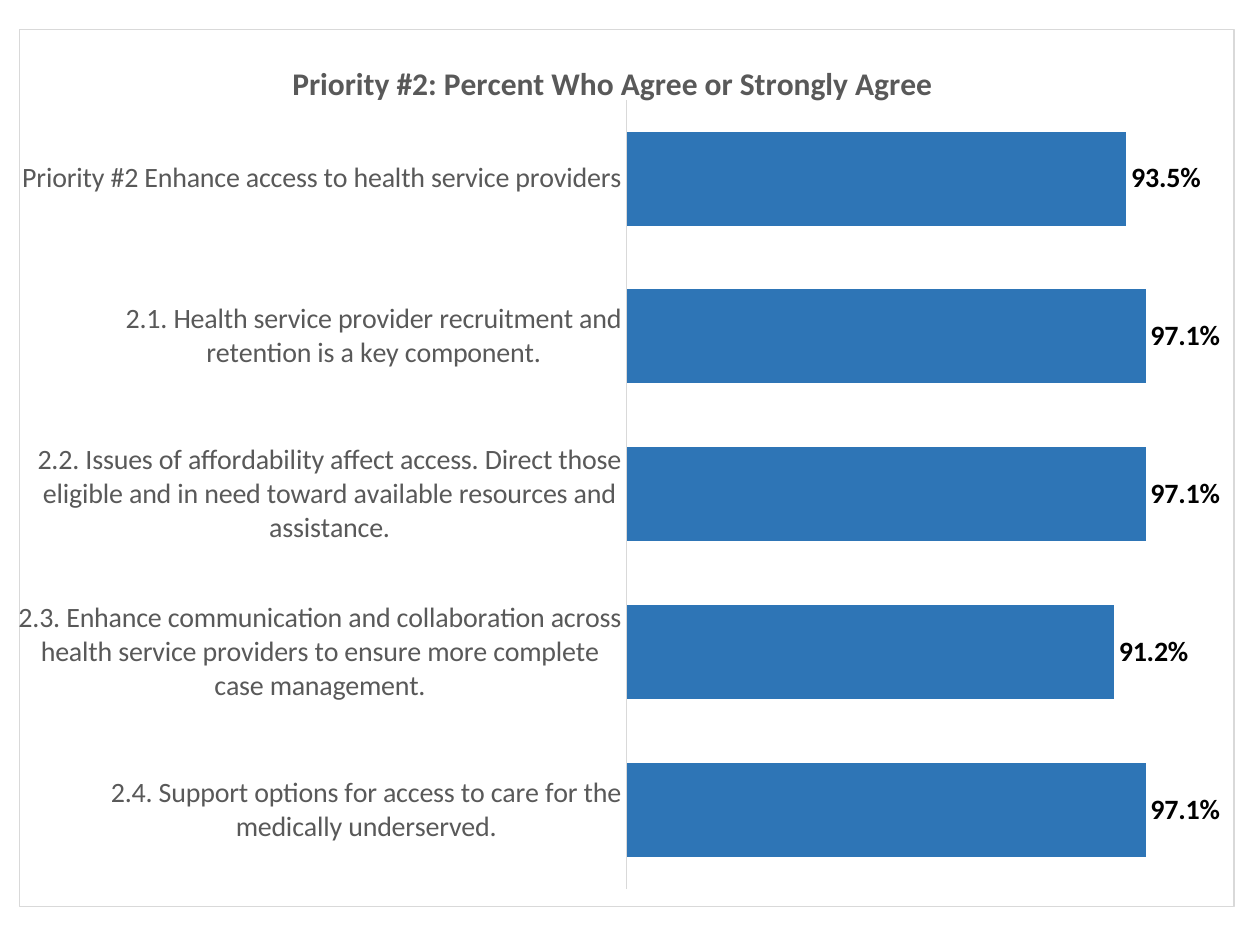
"""Build a one-slide deck with a bar chart of agreement on Priority #2."""
from lxml import etree
from pptx import Presentation
from pptx import util as u
from pptx.chart import data as chart_data
from pptx.dml.color import RGBColor
from pptx.enum import chart as ch
from pptx.oxml import ns

BLACK = RGBColor(0x00, 0x00, 0x00)
GREY = RGBColor(0x59, 0x59, 0x59)
LIGHT_GREY = RGBColor(0xD9, 0xD9, 0xD9)
BLUE = RGBColor(0x2E, 0x75, 0xB6)

TITLE = "Priority #2: Percent Who Agree or Strongly Agree"
AGREEMENT = {
    "Priority #2 Enhance access to health service providers": 0.935,
    "2.1. Health service provider recruitment and retention is a key component.": 0.971,
    "2.2. Issues of affordability affect access. Direct those eligible and in need "
    "toward available resources and assistance.": 0.971,
    "2.3. Enhance communication and collaboration across health service providers "
    "to ensure more complete case management.": 0.912,
    "2.4. Support options for access to care for the medically underserved.": 0.971,
}


class Slide:
    font_name = "Calibri"
    percent = "0.0%"

    def __init__(self, deck):
        self.page = deck.slides.add_slide(deck.slide_layouts[6])

    def set_font(self, font, size, color, bold=False):
        font.name, font.size, font.bold = self.font_name, u.Pt(size), bold
        font.color.rgb = color

    def place(self, parent, index, **settings):
        for old in parent.findall(ns.qn("c:layout")):
            parent.remove(old)
        layout = etree.Element(ns.qn("c:layout"))
        manual = etree.SubElement(layout, ns.qn("c:manualLayout"))
        for name, value in settings.items():
            etree.SubElement(manual, ns.qn(f"c:{name}"), val=str(value))
        parent.insert(index, layout)

    def add_border(self, chart, color, width):
        area = ns.qn("c:chart")
        props = etree.Element(ns.qn("c:spPr"))
        etree.SubElement(props, ns.qn("a:noFill"))
        line = etree.SubElement(props, ns.qn("a:ln"), w=str(u.Pt(width)))
        fill = etree.SubElement(line, ns.qn("a:solidFill"))
        etree.SubElement(fill, ns.qn("a:srgbClr"), val=str(color))
        chart._chartSpace.find(area).addnext(props)

    def add_title(self, chart, title):
        para = chart.chart_title.text_frame.paragraphs[0]
        para.text = title
        self.set_font(para.font, 18, GREY, bold=True)
        self.place(chart.chart_title._element, 1,
                   xMode="edge", yMode="edge", x=0.22, y=0.03)

    def format_axes(self, chart):
        categories, values = chart.category_axis, chart.value_axis
        categories.reverse_order = True
        categories.major_tick_mark = ch.XL_TICK_MARK.NONE
        categories.format.line.color.rgb = LIGHT_GREY
        categories.format.line.width = u.Pt(0.75)
        self.set_font(categories.tick_labels.font, 16, GREY)
        values.minimum_scale, values.maximum_scale = 0, 1
        values.has_major_gridlines = False
        values.visible = False

    def format_bars(self, chart):
        plot = chart.plots[0]
        plot.gap_width = 68
        plot.vary_by_categories = False
        bars = plot.series[0]
        bars.format.fill.solid()
        bars.format.fill.fore_color.rgb = BLUE
        labels = bars.data_labels
        labels.show_value = True
        labels.position = ch.XL_LABEL_POSITION.OUTSIDE_END
        labels.number_format = self.percent
        labels.number_format_is_linked = False
        self.set_font(labels.font, 16, BLACK, bold=True)

    def add_bar_chart(self, title, shares, left, top, width, height):
        data = chart_data.CategoryChartData(number_format=self.percent)
        data.categories = list(shares)
        data.add_series("Series 1", list(shares.values()))
        frame = self.page.shapes.add_chart(
            ch.XL_CHART_TYPE.BAR_CLUSTERED,
            u.Pt(left), u.Pt(top), u.Pt(width), u.Pt(height), data)
        chart = frame.chart
        chart.has_legend = False
        self.set_font(chart.font, 10, BLACK)
        self.add_border(chart, LIGHT_GREY, 0.75)
        self.add_title(chart, title)
        self.format_axes(chart)
        self.format_bars(chart)
        self.place(chart._chartSpace.chart.plotArea, 0, layoutTarget="inner",
                   xMode="edge", yMode="edge", x=0.5, y=0.08, w=0.44, h=0.9)


def main():
    deck = Presentation()
    deck.slide_width, deck.slide_height = u.Pt(720), u.Pt(540)
    Slide(deck).add_bar_chart(TITLE, AGREEMENT, 10.5, 16.5, 695, 502)
    deck.save("out.pptx")


if __name__ == "__main__":
    main()
